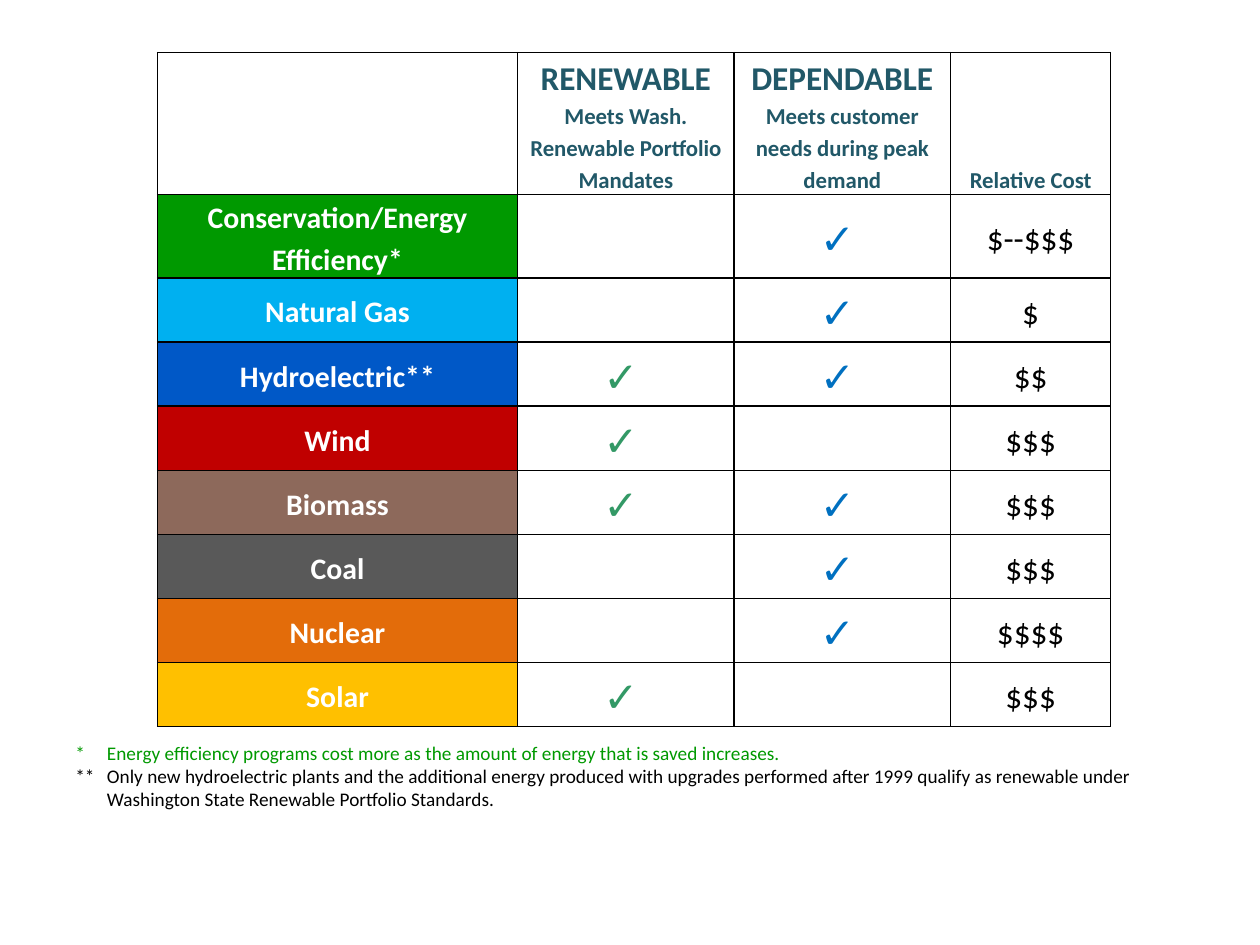
from lxml.etree import SubElement
from pptx import Presentation
from pptx.dml.color import RGBColor
from pptx.enum.text import MSO_ANCHOR, PP_ALIGN
from pptx.oxml.ns import qn
from pptx.util import Inches, Pt

COLORS = {
    "white": "FFFFFF", "black": "000000", "heading": "215868",
    "renewable": "339966", "dependable": "0070C0", "footnote": "009900",
}
COLUMNS = [28.58, 17.18, 17.18, 12.72]
HEADER_ROW, TALL_ROW, ROW = 11.25, 6.62, 5.09
CHECK = "✓"

HEADERS = [
    [],
    [("RENEWABLE", 19), ("Meets Wash. Renewable Portfolio Mandates", 13)],
    [("DEPENDABLE", 19), ("Meets customer needs during peak demand", 13)],
    [("Relative Cost", 13)],
]
# name, fill, renewable, dependable, relative cost
SOURCES = [
    ("Conservation/Energy Efficiency*", "009900", False, True, "$--$$$"),
    ("Natural Gas", "00B0F0", False, True, "$"),
    ("Hydroelectric**", "0058C7", True, True, "$$"),
    ("Wind", "C00000", True, False, "$$$"),
    ("Biomass", "8D695B", True, True, "$$$"),
    ("Coal", "595959", False, True, "$$$"),
    ("Nuclear", "E36C0A", False, True, "$$$$"),
    ("Solar", "FFC000", True, False, "$$$"),
]
FOOTNOTES = [
    ("*", "Energy efficiency programs cost more as the amount of energy that is "
     "saved increases.", "footnote"),
    ("**", "Only new hydroelectric plants and the additional energy produced with "
     "upgrades performed after 1999 qualify as renewable under Washington State "
     "Renewable Portfolio Standards.", "black"),
]


def grid(units):
    """Convert units of a 100 by 75 grid to a length on the slide."""
    return Inches(units / 10)


class SlideBuilder:
    font = "Calibri"

    def __init__(self, prs):
        self.s = prs.slides.add_slide(prs.slide_layouts[6])

    def run(self, p, text, size, color, bold=False):
        r = p.add_run()
        r.text = text
        r.font.name = self.font
        r.font.size = Pt(size)
        r.font.bold = bold
        r.font.color.rgb = RGBColor.from_string(color)

    def table(self, left, top, columns, rows):
        frame = self.s.shapes.add_table(
            len(rows), len(columns), grid(left), grid(top),
            grid(sum(columns)), grid(sum(rows)))
        table = frame.table
        table.first_row = table.horz_banding = False
        for column, width in zip(table.columns, columns):
            column.width = grid(width)
        for row, height in zip(table.rows, rows):
            row.height = grid(height)
        for cell in table.iter_cells():
            self.borders(cell)
            self.fill(cell, COLORS["white"])
            cell.margin_left = cell.margin_right = Inches(0.09)
            cell.margin_top = cell.margin_bottom = 0
            cell.vertical_anchor = MSO_ANCHOR.MIDDLE
        return table

    def borders(self, cell):
        tcPr = cell._tc.get_or_add_tcPr()
        for side in ("lnL", "lnR", "lnT", "lnB"):
            ln = SubElement(tcPr, qn(f"a:{side}"), w=str(Pt(1)))
            fill = SubElement(ln, qn("a:solidFill"))
            SubElement(fill, qn("a:srgbClr"), val=COLORS["black"])

    def fill(self, cell, color):
        cell.fill.solid()
        cell.fill.fore_color.rgb = RGBColor.from_string(color)

    def cell_text(self, cell, lines, color, bold=False):
        tf = cell.text_frame
        for i, (text, size) in enumerate(lines):
            p = tf.add_paragraph() if i else tf.paragraphs[0]
            p.alignment = PP_ALIGN.CENTER
            p.line_spacing = 1.15
            self.run(p, text, size, color, bold)

    def hanging_indent(self, p):
        pPr = p._p.get_or_add_pPr()
        pPr.set("marL", str(Inches(0.25)))
        pPr.set("indent", str(-Inches(0.25)))
        return pPr

    def check(self, cell, color):
        """Mark a cell with a check bullet; a bullet needs a run to be drawn."""
        self.cell_text(cell, [(" ", 24)], color)
        pPr = self.hanging_indent(cell.text_frame.paragraphs[0])
        bullet_color = SubElement(pPr, qn("a:buClr"))
        SubElement(bullet_color, qn("a:srgbClr"), val=color)
        SubElement(pPr, qn("a:buFont"), typeface=self.font)
        SubElement(pPr, qn("a:buChar"), char=CHECK)

    def footnotes(self, left, top, width, height, notes):
        box = self.s.shapes.add_textbox(
            grid(left), grid(top), grid(width), grid(height))
        tf = box.text_frame
        tf.word_wrap = True
        for i, (mark, text, color) in enumerate(notes):
            p = tf.add_paragraph() if i else tf.paragraphs[0]
            self.hanging_indent(p)
            self.run(p, f"{mark}\t{text}", 11, COLORS[color])


def main():
    prs = Presentation()
    prs.slide_width, prs.slide_height = grid(100), grid(75)
    slide = SlideBuilder(prs)

    rows = [HEADER_ROW, TALL_ROW] + [ROW] * (len(SOURCES) - 1)
    table = slide.table(12.5, 4.17, COLUMNS, rows)
    for col, lines in enumerate(HEADERS):
        slide.cell_text(table.cell(0, col), lines, COLORS["heading"], bold=True)
    table.cell(0, 3).vertical_anchor = MSO_ANCHOR.BOTTOM

    for row, (name, fill, renewable, dependable, cost) in enumerate(SOURCES, 1):
        source = table.cell(row, 0)
        slide.fill(source, fill)
        slide.cell_text(source, [(name, 17)], COLORS["white"], bold=True)
        if renewable:
            slide.check(table.cell(row, 1), COLORS["renewable"])
        if dependable:
            slide.check(table.cell(row, 2), COLORS["dependable"])
        slide.cell_text(table.cell(row, 3), [(cost, 19)], COLORS["black"])

    slide.footnotes(5, 58.35, 90.8, 8.4, FOOTNOTES)
    prs.save("out.pptx")


if __name__ == "__main__":
    main()
